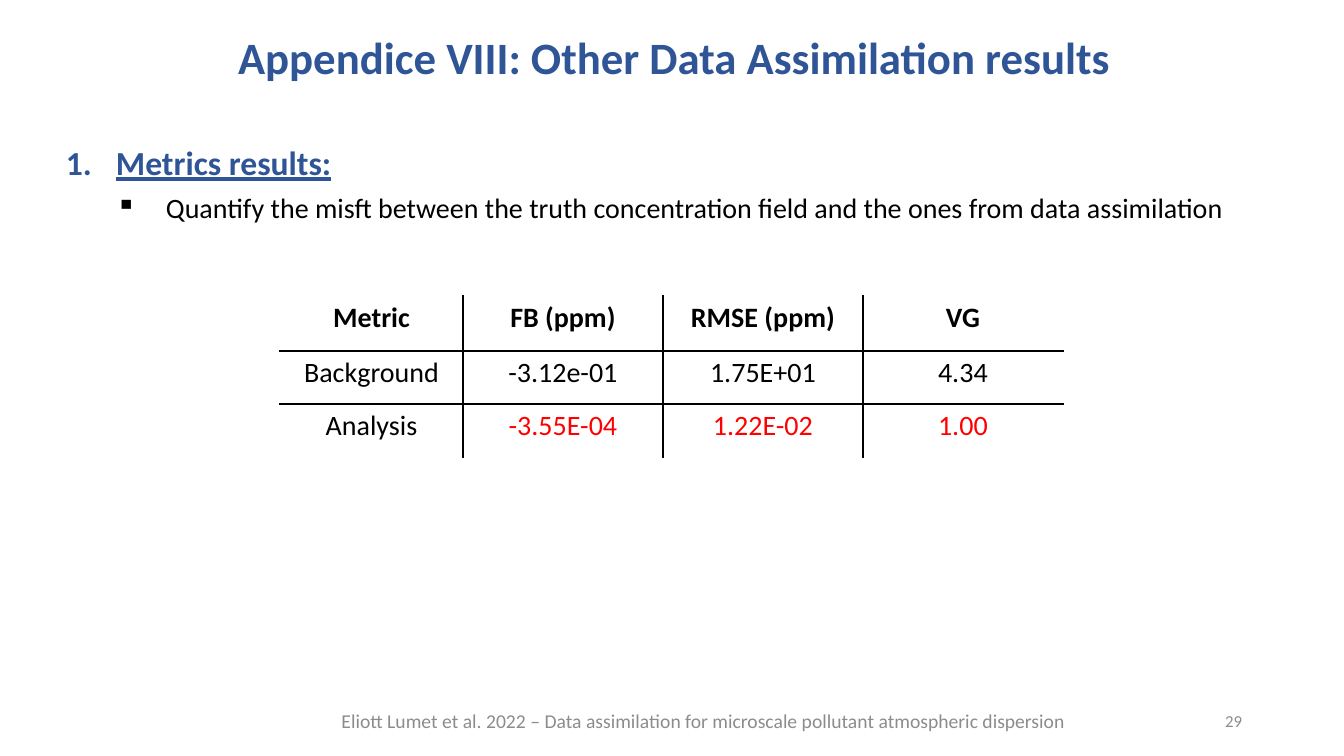
import pptx
import pptx.util
import pptx.dml.color
import pptx.enum.text
import pptx.oxml
import pptx.oxml.ns
from lxml import etree

RGB = pptx.dml.color.RGBColor
BLUE = RGB(0x2F, 0x55, 0x97)
GRAY = RGB(0x8C, 0x8C, 0x8C)
BLACK = RGB(0, 0, 0)
WHITE = RGB(255, 255, 255)
RED = RGB(255, 0, 0)

ALIGN = pptx.enum.text.PP_ALIGN
ANCHOR = pptx.enum.text.MSO_ANCHOR
FONT = "Calibri"
SCALE = 914400 / 100.8  # EMU in one px

ROWS = [
    ["Metric", "FB (ppm)", "RMSE (ppm)", "VG"],
    ["Background", "-3.12e-01", "1.75E+01", "4.34"],
    ["Analysis", "-3.55E-04", "1.22E-02", "1.00"],
]
WIDTHS = [183, 200, 200, 200]
HEIGHTS = [55, 53, 55]


def px(n):
    return pptx.util.Emu(round(n * SCALE))


def add_xml(parent, tag, **attrs):
    return etree.SubElement(parent, pptx.oxml.ns.qn(tag), attrs)


def write(para, text, size=20, color=BLACK, bold=False, line=False,
          align=ALIGN.LEFT):
    para.alignment = align
    run = para.add_run()
    run.text = text
    font = run.font
    font.name, font.size = FONT, pptx.util.Pt(size)
    font.bold, font.underline = bold, line
    font.color.rgb = color


def add_box(slide, x, y, w, h, anchor=ANCHOR.MIDDLE):
    frame = slide.shapes.add_textbox(px(x), px(y), px(w), px(h)).text_frame
    frame.word_wrap = True
    frame.vertical_anchor = anchor
    return frame


def add_mark(para, tag, indent, **attrs):
    props = para._p.get_or_add_pPr()
    props.set("marL", str(px(indent)))
    props.set("indent", str(px(-50)))
    add_xml(props, tag, **attrs)


def add_edge(cell, side, color):
    edge = add_xml(cell._tc.get_or_add_tcPr(), "a:ln" + side, w="12700")
    fill = add_xml(edge, "a:solidFill")
    add_xml(fill, "a:srgbClr", val=str(color))


def add_grid(slide, x, y):
    shape = slide.shapes.add_table(len(ROWS), len(WIDTHS), px(x), px(y),
                                   px(sum(WIDTHS)), px(sum(HEIGHTS)))
    table = shape.table
    table.horz_banding = False
    for col, width in zip(table.columns, WIDTHS):
        col.width = px(width)
    for row, height in zip(table.rows, HEIGHTS):
        row.height = px(height)
    end_r, end_c = len(ROWS) - 1, len(WIDTHS) - 1
    for r, row in enumerate(ROWS):
        for c, text in enumerate(row):
            cell = table.cell(r, c)
            write(cell.text_frame.paragraphs[0], text, bold=r == 0,
                  color=RED if r == end_r and c else BLACK,
                  align=ALIGN.CENTER)
            # Only the inner edges are black
            outer = {"L": c == 0, "R": c == end_c,
                     "T": r == 0, "B": r == end_r}
            for side, out in outer.items():
                add_edge(cell, side, WHITE if out else BLACK)
            cell.fill.background()


def main():
    deck = pptx.Presentation()
    deck.slide_width, deck.slide_height = px(1344), px(756)
    slide = deck.slides.add_slide(deck.slide_layouts[5])

    # Title
    title = slide.shapes.title
    title.left, title.top = px(228), px(32)
    title.width, title.height = px(1096), px(56)
    title.text_frame.vertical_anchor = ANCHOR.MIDDLE
    head = title.text_frame.paragraphs[0]
    head.line_spacing = 0.9
    write(head, "Appendice VIII: Other Data Assimilation results",
          size=32, color=BLUE, bold=True)

    # Numbered heading and its point
    body = add_box(slide, 56, 137, 1184, 94, anchor=ANCHOR.TOP)
    first = body.paragraphs[0]
    add_mark(first, "a:buAutoNum", 50, type="arabicPeriod")
    write(first, "Metrics results:", size=24, color=BLUE, bold=True, line=True)
    point = body.add_paragraph()
    point.level = 1
    point.space_before = pptx.util.Pt(6)
    add_mark(point, "a:buChar", 100, char="▪")
    write(point, "Quantify the misft between the truth concentration field "
          "and the ones from data assimilation")

    # Metrics table
    add_grid(slide, 280, 296)

    # Footer and page number
    foot = add_box(slide, 265, 701, 877, 40)
    write(foot.paragraphs[0], "Eliott Lumet et al. 2022 – Data assimilation "
          "for microscale pollutant atmospheric dispersion",
          size=14, color=GRAY, align=ALIGN.CENTER)
    page = add_box(slide, 950, 701, 302, 40)
    write(page.paragraphs[0], "29", size=12, color=GRAY, align=ALIGN.RIGHT)

    deck.save("out.pptx")


if __name__ == "__main__":
    main()
